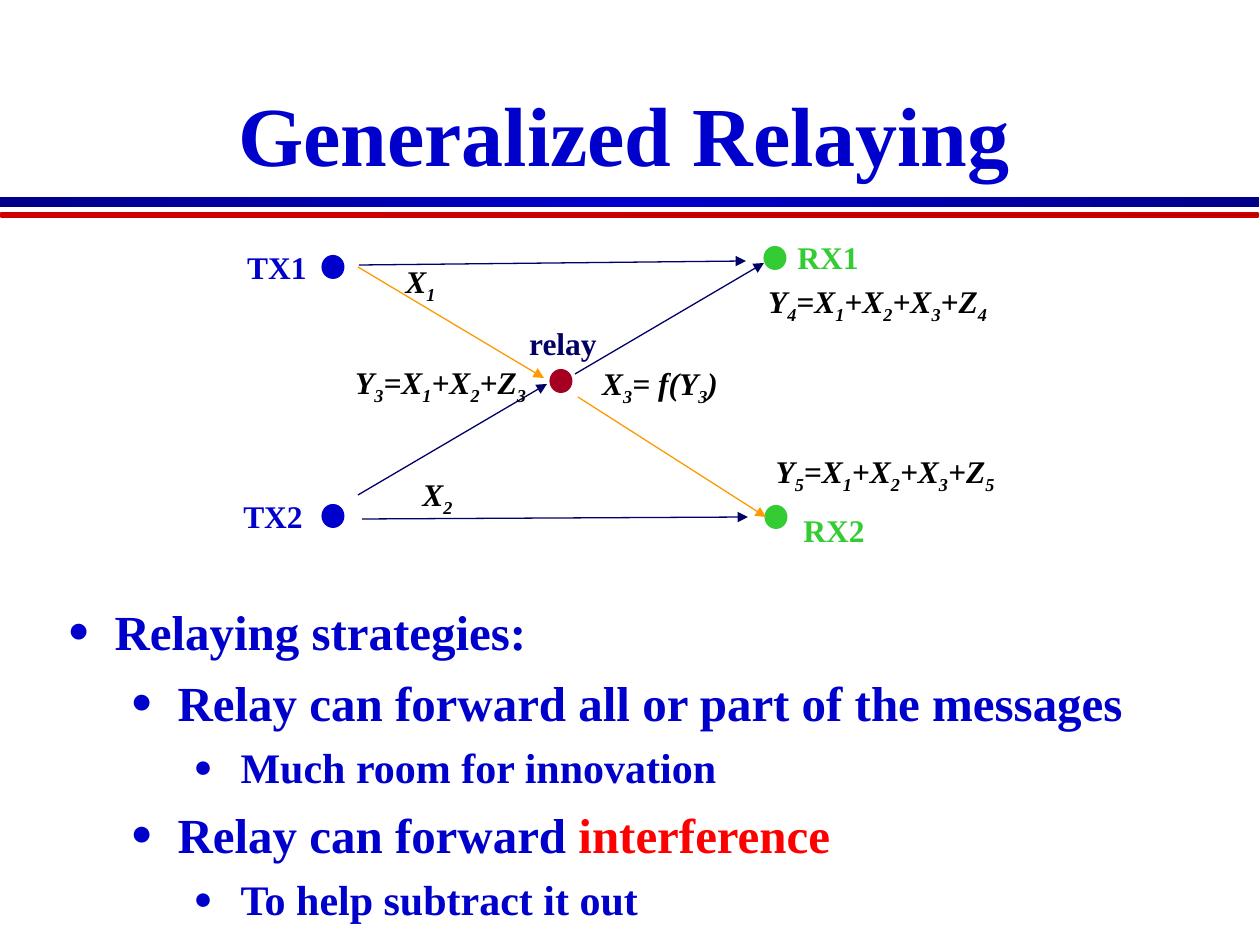
import copy
import itertools

import lxml.etree
import pptx
import pptx.dml.color
import pptx.enum.shapes
import pptx.enum.text
import pptx.oxml.ns
import pptx.util

PIXELS_PER_INCH = 126
COLORS = {
    "blue": "0000CC",
    "dark_blue": "000089",
    "navy": "000066",
    "red": "FF0000",
    "rule_red": "CC0000",
    "rule_dark_red": "B90000",
    "relay": "A50021",
    "green": "33CC33",
    "orange": "FE9B03",
    "black": "000000",
}
FONT = "Times New Roman"
ALIGN = pptx.enum.text.PP_ALIGN
SHAPE = pptx.enum.shapes.MSO_SHAPE


def px(length):
    return round(length * pptx.util.Inches(1) / PIXELS_PER_INCH)


def rgb(name):
    return pptx.dml.color.RGBColor.from_string(COLORS[name])


def add_element(parent, tag, **attributes):
    return lxml.etree.SubElement(parent, pptx.oxml.ns.qn(tag), attributes)


def write_text(paragraph, text, size=18, color="blue", italic=False, subscripts=False):
    if subscripts:
        parts = [(digit, "".join(group)) for digit, group in itertools.groupby(text, str.isdigit)]
    else:
        parts = [(False, text)]
    for lowered, part in parts:
        run = paragraph.add_run()
        run.text = part
        run.font.name = FONT
        run.font.size = pptx.util.Pt(size)
        run.font.bold = True
        run.font.italic = italic
        run.font.color.rgb = rgb(color)
        if lowered:
            run._r.get_or_add_rPr().set("baseline", "-25000")


def place(shape, left, top, width, height):
    shape.left, shape.top = px(left), px(top)
    shape.width, shape.height = px(width), px(height)


def add_title(slide, left, top, width, height):
    title = slide.shapes.title
    place(title, left, top, width, height)
    frame = title.text_frame
    frame.auto_size = pptx.enum.text.MSO_AUTO_SIZE.NONE
    frame.vertical_anchor = pptx.enum.text.MSO_ANCHOR.BOTTOM
    frame.paragraphs[0].alignment = ALIGN.CENTER
    write_text(frame.paragraphs[0], "Generalized Relaying", size=48)


def add_bar(slide, left, top, width, height, colors):
    bar = slide.shapes.add_shape(SHAPE.RECTANGLE, px(left), px(top), px(width), px(height))
    bar.shadow.inherit = False
    bar.line.fill.background()
    bar.fill.gradient()
    bar.fill.gradient_angle = 0
    stop_list = bar._element.spPr.find(".//" + pptx.oxml.ns.qn("a:gsLst"))
    while len(stop_list) < len(colors):
        stop_list.append(copy.deepcopy(stop_list[-1]))
    for index, (stop, color) in enumerate(zip(bar.fill.gradient_stops, colors)):
        stop.position = index / (len(colors) - 1)
        stop.color.rgb = rgb(color)
    return bar


def add_title_rule(slide, left, top, width):
    add_bar(slide, left, top, width, 10, ["dark_blue", "blue", "dark_blue"])
    thin_bar = add_bar(slide, left + 1, top + 16, width - 2, 4, ["rule_red", "rule_dark_red"])
    thin_bar.line.color.rgb = rgb("rule_red")
    thin_bar.line.width = pptx.util.Pt(1)


def add_node(slide, center_x, center_y, color):
    width, height = 23, 24
    node = slide.shapes.add_shape(
        SHAPE.OVAL, px(center_x - width / 2), px(center_y - height / 2), px(width), px(height)
    )
    node.shadow.inherit = False
    node.fill.solid()
    node.fill.fore_color.rgb = rgb(color)
    node.line.fill.background()


def add_label(slide, left, top, width, text, **text_format):
    label = slide.shapes.add_textbox(px(left), px(top), px(width), px(50))
    label.text_frame.word_wrap = True
    paragraph = label.text_frame.paragraphs[0]
    paragraph.alignment = ALIGN.CENTER
    write_text(paragraph, text, **text_format)


def add_arrow(slide, start_x, start_y, end_x, end_y, color):
    arrow = slide.shapes.add_connector(
        pptx.enum.shapes.MSO_CONNECTOR.STRAIGHT, px(start_x), px(start_y), px(end_x), px(end_y)
    )
    arrow.line.color.rgb = rgb(color)
    arrow.line.width = pptx.util.Pt(0.75)
    add_element(arrow.line._get_or_add_ln(), "a:tailEnd", type="triangle")
    add_element(arrow._element.spPr, "a:effectLst")


def add_relay_diagram(slide, left, top):
    nodes = [
        (139, 284, "blue"),
        (367, 149, "relay"),
        (139, 35, "blue"),
        (581, 26, "green"),
        (582, 285, "green"),
    ]
    names = [
        (4, 10, 158, "TX1", "blue"),
        (0, 259, 158, "TX2", "blue"),
        (276, 86, 186, "relay", "navy"),
        (547, 273, 186, "RX2", "green"),
        (541, 0, 186, "RX1", "green"),
    ]
    arrows = [
        (164, 263, 353, 152, "navy"),
        (381, 142, 570, 31, "navy"),
        (164, 35, 350, 146, "orange"),
        (384, 165, 572, 285, "orange"),
        (165, 33, 552, 29, "navy"),
        (168, 287, 554, 285, "navy"),
    ]
    formulas = [
        (161, 24, 131, "X1"),
        (178, 237, 131, "X2"),
        (137, 125, 219, "Y3=X1+X2+Z3"),
        (541, 44, 285, "Y4=X1+X2+X3+Z4"),
        (541, 214, 300, "Y5=X1+X2+X3+Z5"),
        (357, 126, 218, "X3= f(Y3)"),
    ]
    for x, y, color in nodes:
        add_node(slide, left + x, top + y, color)
    for x, y, width, text, color in names:
        add_label(slide, left + x, top + y, width, text, color=color)
    for start_x, start_y, end_x, end_y, color in arrows:
        add_arrow(slide, left + start_x, top + start_y, left + end_x, top + end_y, color)
    for x, y, width, text in formulas:
        add_label(
            slide, left + x, top + y, width, text, color="black", italic=True, subscripts=True
        )


def add_strategies(slide, left, top, width, height):
    body = slide.placeholders[1]
    place(body, left, top, width, height)
    frame = body.text_frame
    frame.auto_size = pptx.enum.text.MSO_AUTO_SIZE.NONE
    items = [
        (0, 28, [("Relaying strategies:", "blue")]),
        (1, 28, [("Relay can forward all or part of the messages", "blue")]),
        (2, 24, [("Much room for innovation", "blue")]),
        (1, 28, [("Relay can forward ", "blue"), ("interference", "red")]),
        (2, 24, [("To help subtract it out", "blue")]),
    ]
    for index, (level, size, parts) in enumerate(items):
        paragraph = frame.add_paragraph() if index else frame.paragraphs[0]
        paragraph.level = level
        paragraph.line_spacing = 1.0 if index else 1.2
        paragraph.space_before = pptx.util.Pt(size / 4)
        properties = paragraph._p.get_or_add_pPr()
        properties.set("marL", str(px(47 + 63 * level)))
        properties.set("indent", str(px(-47)))
        bullet_color = add_element(properties, "a:buClr")
        add_element(bullet_color, "a:srgbClr", val=COLORS["blue"])
        add_element(properties, "a:buSzPct", val="75000")
        add_element(properties, "a:buFont", typeface=FONT)
        add_element(properties, "a:buChar", char="●")
        for text, color in parts:
            write_text(paragraph, text, size=size, color=color)


def main():
    presentation = pptx.Presentation()
    presentation.slide_width, presentation.slide_height = px(1260), px(945)
    slide = presentation.slides.add_slide(presentation.slide_layouts[1])
    add_title_rule(slide, 0, 197, 1259)
    add_title(slide, 84, 32, 1081, 158)
    add_strategies(slide, 55, 583, 1205, 84)
    add_relay_diagram(slide, 194, 232)
    presentation.save("out.pptx")


if __name__ == "__main__":
    main()
